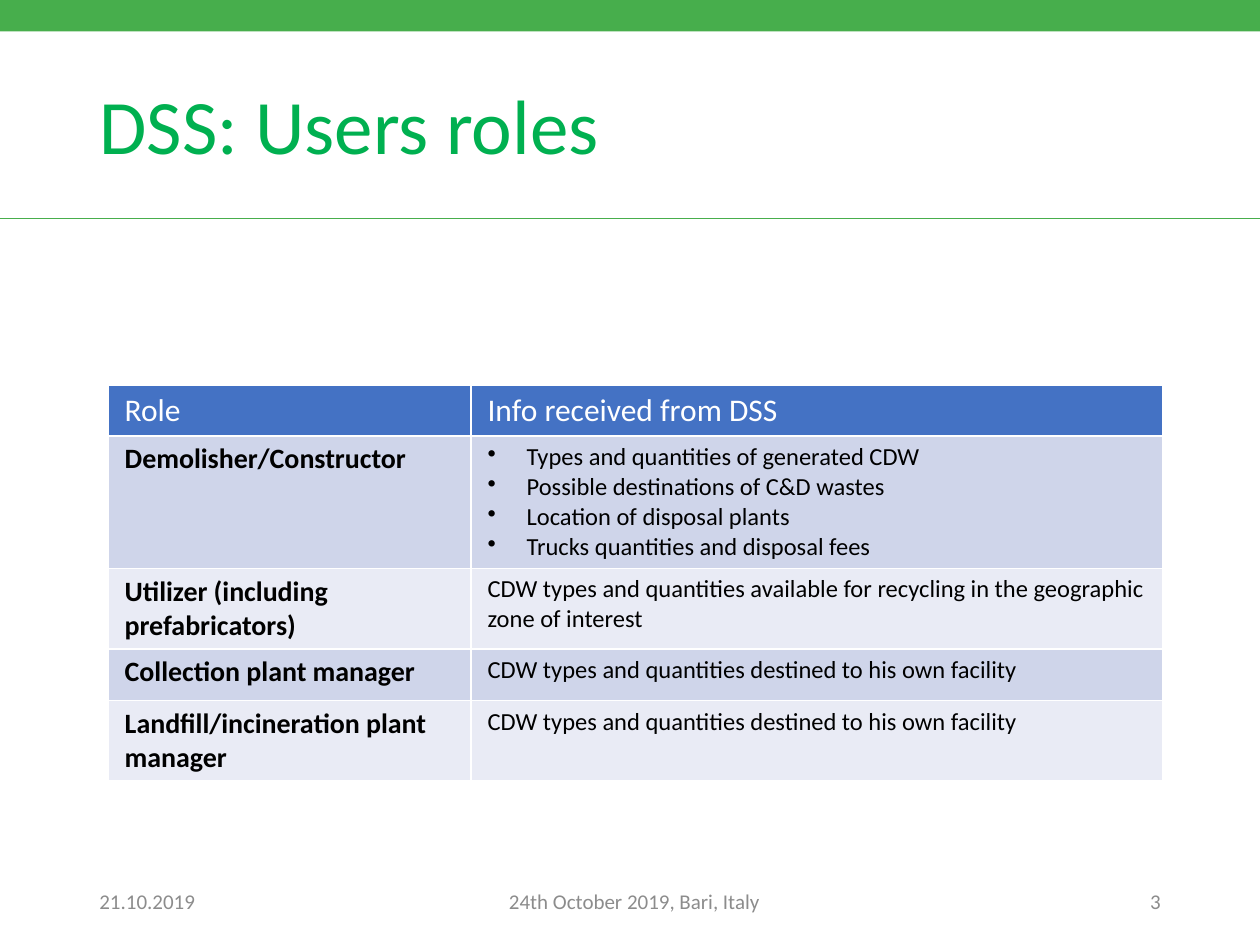
"""Build the slide on the user roles of the DSS."""
from lxml import etree
from pptx import Presentation
from pptx.dml.color import RGBColor
from pptx.enum import shapes, text
from pptx.oxml import ns
from pptx.util import Inches, Pt

BAND_GREEN = RGBColor(0x47, 0xAE, 0x4C)
TITLE_GREEN = RGBColor(0x00, 0xB0, 0x50)
GREY = RGBColor(0x8C, 0x8C, 0x8C)
HEADER_BLUE = RGBColor(0x44, 0x72, 0xC4)
ROW_TINTS = (RGBColor(0xCF, 0xD5, 0xEA), RGBColor(0xE9, 0xEB, 0xF5))
WHITE = RGBColor(0xFF, 0xFF, 0xFF)
BLACK = RGBColor(0x00, 0x00, 0x00)

HEADER = ("Role", "Info received from DSS")
OWN_FACILITY = "CDW types and quantities destined to his own facility"
ROLES = (
    ("Demolisher/Constructor", (
        "Types and quantities of generated CDW",
        "Possible destinations of C&D wastes",
        "Location of disposal plants",
        "Trucks quantities and disposal fees",
    )),
    ("Utilizer (including prefabricators)",
     ("CDW types and quantities available for recycling in the geographic zone of interest",)),
    ("Collection plant manager", (OWN_FACILITY,)),
    ("Landfill/incineration plant manager", (OWN_FACILITY,)),
)
COLUMN_WIDTHS = (2.88, 5.49)
ROW_HEIGHTS = (0.4, 1.05, 0.64, 0.41, 0.64)
FOOTERS = (
    ("21.10.2019", 0.69, 1.12, text.PP_ALIGN.LEFT),
    ("24th October 2019, Bari, Italy", 3.31, 3.45, text.PP_ALIGN.CENTER),
    ("3", 8.33, 0.98, text.PP_ALIGN.RIGHT),
)
HEADER_FONT = {"size": Pt(18), "bold": False}
ROLE_FONT = {"size": Pt(16), "bold": True}
INFO_FONT = {"size": Pt(14), "bold": False}


def style_font(font, color, formats):
    """Apply the slide's typeface, a colour and further format values."""
    for name, value in {"name": "Calibri", **formats}.items():
        setattr(font, name, value)
    font.color.rgb = color


def add_band_and_rule(slide):
    """Draw the green band at the top and the thin rule under the title."""
    band = slide.shapes.add_shape(
        shapes.MSO_SHAPE.RECTANGLE, 0, 0, Inches(10), Inches(0.25))
    band.shadow.inherit = False
    band.fill.solid()
    band.fill.fore_color.rgb = BAND_GREEN
    band.line.fill.background()
    rule = slide.shapes.add_connector(
        shapes.MSO_CONNECTOR.STRAIGHT, 0, Inches(1.73), Inches(10), Inches(1.73))
    rule.line.color.rgb = BAND_GREEN
    rule.line.width = Pt(0.5)
    etree.SubElement(rule._element.spPr, ns.qn("a:effectLst"))


def fill_title(title, wording):
    """Place and format the title placeholder."""
    places = {"left": 0.69, "top": 0.4, "width": 8.62, "height": 1.25}
    for name, value in places.items():
        setattr(title, name, Inches(value))
    frame = title.text_frame
    frame.text = wording
    frame.auto_size = text.MSO_AUTO_SIZE.NONE
    frame.vertical_anchor = text.MSO_ANCHOR.MIDDLE
    paragraph = frame.paragraphs[0]
    paragraph.alignment = text.PP_ALIGN.LEFT
    paragraph.line_spacing = 0.9
    style_font(paragraph.font, TITLE_GREEN, {"size": Pt(44)})


def add_footer(slide, wording, left, width, alignment):
    """Add one grey text on the footer line."""
    footer = slide.shapes.add_textbox(
        Inches(left), Inches(6.95), Inches(width), Inches(0.4))
    frame = footer.text_frame
    frame.word_wrap = True
    frame.vertical_anchor = text.MSO_ANCHOR.MIDDLE
    paragraph = frame.paragraphs[0]
    paragraph.text = wording
    paragraph.alignment = alignment
    style_font(paragraph.font, GREY, {"size": Pt(12)})


def add_bullet(paragraph):
    """Give a paragraph a hanging bullet."""
    properties = paragraph._p.get_or_add_pPr()
    indent = Inches(0.31)
    properties.set("marL", str(indent))
    properties.set("indent", str(-indent))
    etree.SubElement(properties, ns.qn("a:buChar"), char="•")


def add_borders(cell):
    """Draw thin white borders on all sides of a cell."""
    properties = cell._tc.get_or_add_tcPr()
    for side in ("lnL", "lnR", "lnT", "lnB"):
        border = etree.SubElement(properties, ns.qn(f"a:{side}"), w=str(Pt(1)))
        paint = etree.SubElement(border, ns.qn("a:solidFill"))
        etree.SubElement(paint, ns.qn("a:srgbClr"), val=str(WHITE))


def fill_cell(cell, lines, tint, color, formats):
    """Write lines into a cell, with bullets when there are several."""
    margins = {"margin_left": 0.13, "margin_right": 0.13,
               "margin_top": 0.05, "margin_bottom": 0.05}
    for name, value in margins.items():
        setattr(cell, name, Inches(value))
    add_borders(cell)
    cell.fill.solid()
    cell.fill.fore_color.rgb = tint
    cell.text = "\n".join(lines)
    for paragraph in cell.text_frame.paragraphs:
        if len(lines) > 1:
            add_bullet(paragraph)
        style_font(paragraph.font, color, formats)


def add_roles_table(slide):
    """Add the table of roles and the information they receive."""
    roles = slide.shapes.add_table(
        len(ROW_HEIGHTS), len(COLUMN_WIDTHS), Inches(0.86), Inches(3.06),
        Inches(sum(COLUMN_WIDTHS)), Inches(sum(ROW_HEIGHTS))).table
    for column, width in zip(roles.columns, COLUMN_WIDTHS):
        column.width = Inches(width)
    for row, height in zip(roles.rows, ROW_HEIGHTS):
        row.height = Inches(height)
    for index, heading in enumerate(HEADER):
        fill_cell(roles.cell(0, index), (heading,), HEADER_BLUE, WHITE, HEADER_FONT)
    for index, (role, info) in enumerate(ROLES):
        tint = ROW_TINTS[index % 2]
        fill_cell(roles.cell(index + 1, 0), (role,), tint, BLACK, ROLE_FONT)
        fill_cell(roles.cell(index + 1, 1), info, tint, BLACK, INFO_FONT)


def main():
    """Build and save the presentation."""
    deck = Presentation()
    deck.slide_width, deck.slide_height = Inches(10), Inches(7.5)
    slide = deck.slides.add_slide(deck.slide_layouts[5])
    add_band_and_rule(slide)
    fill_title(slide.shapes.title, "DSS: Users roles")
    for footer in FOOTERS:
        add_footer(slide, *footer)
    add_roles_table(slide)
    deck.save("out.pptx")


if __name__ == "__main__":
    main()
